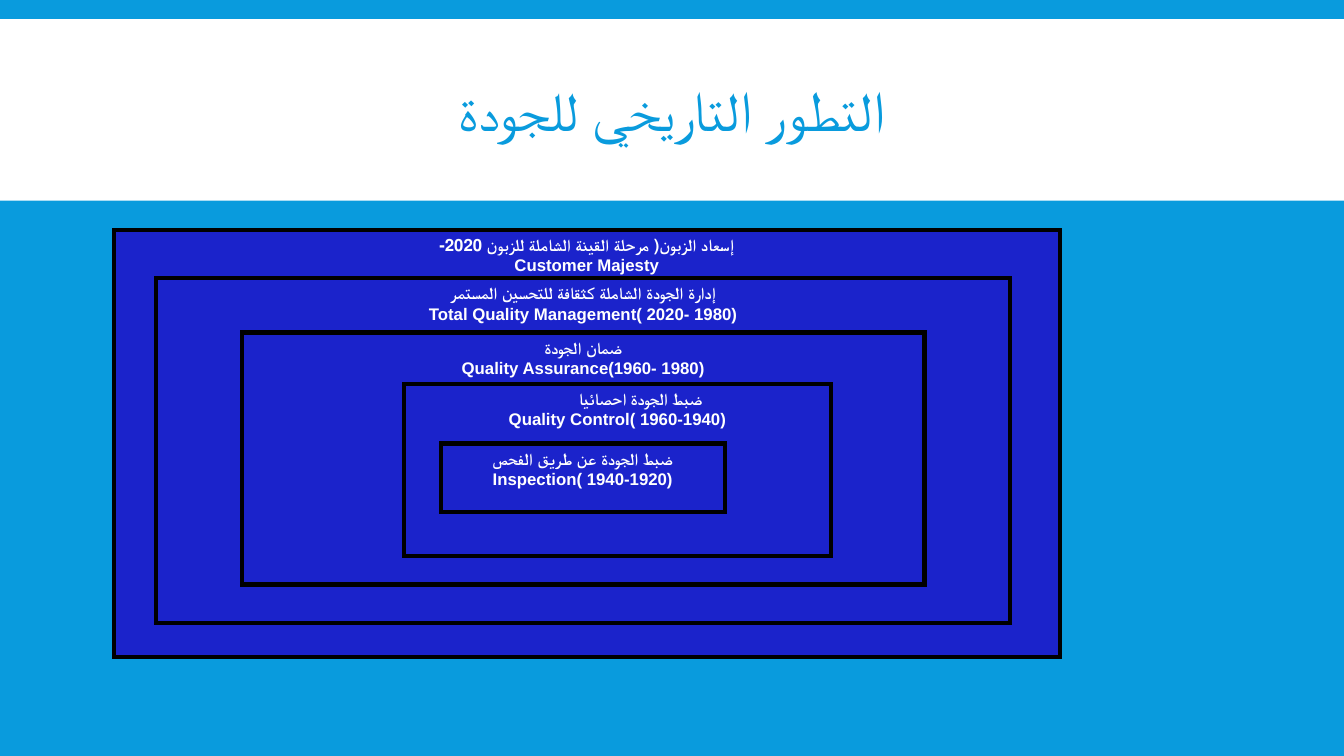
from lxml.etree import SubElement
from pptx import Presentation
from pptx.dml.color import RGBColor
from pptx.enum.shapes import MSO_SHAPE
from pptx.enum.text import MSO_ANCHOR, PP_ALIGN
from pptx.oxml.ns import qn
from pptx.util import Inches, Pt

SKY = RGBColor(0x09, 0x9B, 0xDD)
NAVY = RGBColor(0x1B, 0x23, 0xCB)
WHITE = RGBColor(0xFF, 0xFF, 0xFF)
BLACK = RGBColor(0x00, 0x00, 0x00)

TITLE = "التطور التاريخي للجودة"
BAND_BOX = (0, 0.19, 13.33, 1.8)
DIAGRAM_BOX = (1.13, 2.28, 9.38, 4.24)

STAGES = [
    (0, 0, 9.38, 4.24, "إسعاد الزبون( مرحلة القينة الشاملة للزبون 2020-", "Arial", 0,
     "Customer Majesty"),
    (0.42, 0.48, 8.47, 3.42, "إدارة الجودة الشاملة كثقافة للتحسين المستمر", "Calibri", 0,
     "Total Quality Management( 2020- 1980)"),
    (1.27, 1.02, 6.77, 2.5, "ضمان الجودة", "Calibri", 0,
     "Quality Assurance(1960- 1980)"),
    (2.88, 1.53, 4.23, 1.71, "ضبط الجودة احصائيا", "Calibri", 0.46,
     "Quality Control( 1960-1940)"),
    (3.24, 2.12, 2.82, 0.68, "ضبط الجودة عن طريق الفحص", "Calibri", 0,
     "Inspection( 1940-1920)"),
]


def add_rtl_run(paragraph, wording, font_name, size, color, bold=False, indent=0):
    """Write one run in a centred right-to-left paragraph."""
    paragraph.alignment = PP_ALIGN.CENTER
    properties = paragraph._p.get_or_add_pPr()
    properties.set("rtl", "1")
    properties.set("marR", str(Inches(indent)))
    run = paragraph.add_run()
    run.text = wording
    run.font.name = font_name
    run.font.size = Pt(size)
    run.font.bold = bold
    run.font.color.rgb = color


def add_rectangle(slide, left, top, width, height, fill):
    """Add a plain filled rectangle without shadow or outline."""
    rectangle = slide.shapes.add_shape(
        MSO_SHAPE.RECTANGLE, Inches(left), Inches(top), Inches(width), Inches(height))
    rectangle.shadow.inherit = False
    rectangle.fill.solid()
    rectangle.fill.fore_color.rgb = fill
    rectangle.line.fill.background()
    return rectangle


def outline_sharply(rectangle):
    """Give a rectangle a thick black outline with square corners."""
    rectangle.line.color.rgb = BLACK
    rectangle.line.width = Pt(3)
    outline = rectangle._element.spPr.find(qn("a:ln"))
    SubElement(outline, qn("a:miter")).set("lim", "800000")


def build_heading(slide, box):
    """Place the white band and the title centred on it."""
    left, top, width, height = box
    band = add_rectangle(slide, left, top, width, height, WHITE)
    heading = slide.shapes.title
    heading._element.addprevious(band._element)
    heading.left, heading.top = Inches(left + 1.32), Inches(top + 0.12)
    heading.width, heading.height = Inches(10.7), Inches(1.65)
    heading.text_frame.vertical_anchor = MSO_ANCHOR.MIDDLE
    paragraph = heading.text_frame.paragraphs[0]
    paragraph.line_spacing = 0.85
    add_rtl_run(paragraph, TITLE, "Cabin", 40, SKY)


def build_stages(slide, box):
    """Nest the stages of quality from the outermost to the innermost."""
    left, top = box[:2]
    for dx, dy, width, height, arabic, arabic_font, indent, english in STAGES:
        stage = add_rectangle(slide, left + dx, top + dy, width, height, NAVY)
        outline_sharply(stage)
        frame = stage.text_frame
        frame.word_wrap = True
        frame.vertical_anchor = MSO_ANCHOR.TOP
        frame.margin_left = frame.margin_right = Inches(0.11)
        frame.margin_top = frame.margin_bottom = Inches(0.05)
        add_rtl_run(frame.paragraphs[0], arabic, arabic_font, 12, WHITE, True, indent)
        add_rtl_run(frame.add_paragraph(), english, "Arial", 12, WHITE, True)


def main():
    """Build and save the slide."""
    presentation = Presentation()
    presentation.slide_width, presentation.slide_height = Inches(13.33), Inches(7.5)
    slide = presentation.slides.add_slide(presentation.slide_layouts[5])
    slide.background.fill.solid()
    slide.background.fill.fore_color.rgb = SKY
    build_heading(slide, BAND_BOX)
    build_stages(slide, DIAGRAM_BOX)
    presentation.save("out.pptx")


if __name__ == "__main__":
    main()
